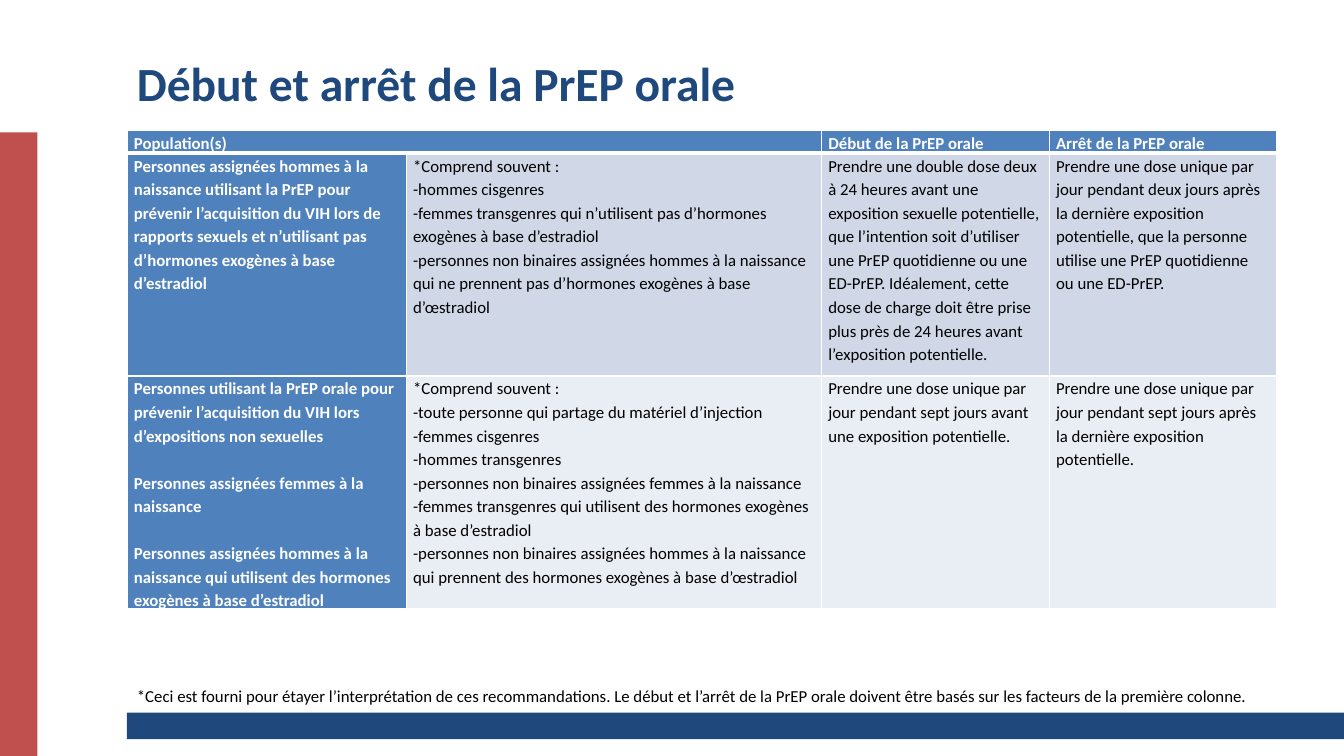
from lxml import etree
from pptx import Presentation
from pptx.dml.color import RGBColor
from pptx.enum.shapes import MSO_SHAPE
from pptx.enum.text import MSO_ANCHOR
from pptx.oxml.ns import qn
from pptx.util import Pt

RECT = MSO_SHAPE.RECTANGLE
TOP, MIDDLE = MSO_ANCHOR.TOP, MSO_ANCHOR.MIDDLE
NAVY = RGBColor(0x1F, 0x49, 0x7D)
RED = RGBColor(0xC0, 0x50, 0x4D)
BLUE = RGBColor(0x4F, 0x81, 0xBD)
PALE = RGBColor(0xD0, 0xD8, 0xE8)
LIGHT = RGBColor(0xE9, 0xED, 0xF4)
WHITE = RGBColor(0xFF, 0xFF, 0xFF)
BLACK = RGBColor(0, 0, 0)

LEFT = 90.7
WIDTH = 821.5
COLS = [199.4, 296.6, 162.7, 162.7]
ROWS = [16.6, 159.1, 162.7]
LINE_GAP = 16.8

HEAD = [["Population(s)"], [], ["Début de la PrEP orale"], ["Arrêt de la PrEP orale"]]
SEXUAL = [
    ["Personnes assignées hommes à la naissance utilisant la PrEP pour prévenir "
     "l’acquisition du VIH lors de rapports sexuels et n’utilisant pas "
     "d’hormones exogènes à base d’estradiol"],
    ["*Comprend souvent :",
     "-hommes cisgenres",
     "-femmes transgenres qui n’utilisent pas d’hormones exogènes à base d’estradiol",
     "-personnes non binaires assignées hommes à la naissance qui ne prennent pas "
     "d’hormones exogènes à base d’œstradiol"],
    ["Prendre une double dose deux à 24 heures avant une exposition sexuelle "
     "potentielle, que l’intention soit d’utiliser une PrEP quotidienne ou une "
     "ED-PrEP. Idéalement, cette dose de charge doit être prise plus près de "
     "24 heures avant l’exposition potentielle."],
    ["Prendre une dose unique par jour pendant deux jours après la dernière "
     "exposition potentielle, que la personne utilise une PrEP quotidienne ou "
     "une ED-PrEP."],
]
OTHER = [
    ["Personnes utilisant la PrEP orale pour prévenir l’acquisition du VIH lors "
     "d’expositions non sexuelles",
     "Personnes assignées femmes à la naissance",
     "Personnes assignées hommes à la naissance qui utilisent des hormones "
     "exogènes à base d’estradiol"],
    ["*Comprend souvent :",
     "-toute personne qui partage du matériel d’injection",
     "-femmes cisgenres",
     "-hommes transgenres",
     "-personnes non binaires assignées femmes à la naissance",
     "-femmes transgenres qui utilisent des hormones exogènes à base d’estradiol",
     "-personnes non binaires assignées hommes à la naissance qui prennent des "
     "hormones exogènes à base d’œstradiol"],
    ["Prendre une dose unique par jour pendant sept jours avant une exposition "
     "potentielle."],
    ["Prendre une dose unique par jour pendant sept jours après la dernière "
     "exposition potentielle."],
]
NOTE = ("*Ceci est fourni pour étayer l’interprétation de ces recommandations. "
        "Le début et l’arrêt de la PrEP orale doivent être basés sur les facteurs "
        "de la première colonne.")


class Deck:
    font = "Calibri"
    size = 12

    def __init__(self, slide):
        self.slide = slide

    def style(self, frame, color, bold=False, size=size):
        for para in frame.paragraphs:
            for run in para.runs:
                font = run.font
                font.name, font.size, font.bold = self.font, Pt(size), bold
                font.color.rgb = color

    def bar(self, x, y, w, h, color):
        shape = self.slide.shapes.add_shape(RECT, Pt(x), Pt(y), Pt(w), Pt(h))
        shape.shadow.inherit = False
        shape.fill.solid()
        shape.fill.fore_color.rgb = color
        shape.line.fill.background()

    def text(self, x, y, w, h, words, color, bold=False, size=size, anchor=TOP):
        frame = self.slide.shapes.add_textbox(Pt(x), Pt(y), Pt(w), Pt(h)).text_frame
        frame.word_wrap = True
        frame.vertical_anchor = anchor
        frame.text = words
        self.style(frame, color, bold, size)

    def border(self, cell, base):
        """Draw white cell edges; base is the width of the lower one."""
        props = cell._tc.get_or_add_tcPr()
        for spot, (side, width) in enumerate(zip("LRTB", (1, 1, 1, base))):
            line = etree.Element(qn(f"a:ln{side}"), w=str(Pt(width)))
            fill = etree.SubElement(line, qn("a:solidFill"))
            etree.SubElement(fill, qn("a:srgbClr"), val=str(WHITE))
            props.insert(spot, line)

    def cell(self, cell, lines, fill, color, gap, base):
        cell.margin_left = cell.margin_right = Pt(5)
        cell.margin_top = cell.margin_bottom = 0
        cell.fill.solid()
        cell.fill.fore_color.rgb = fill
        self.border(cell, base)
        frame = cell.text_frame
        frame.text = "\n".join(lines)
        for num, para in enumerate(frame.paragraphs):
            para.line_spacing = 1.15
            para.space_before = Pt(gap if num else 0)
        self.style(frame, color, color == WHITE)

    def table(self, x, y, cols, rows, data, fills):
        table = self.slide.shapes.add_table(
            len(rows), len(cols), Pt(x), Pt(y), Pt(sum(cols)), Pt(sum(rows))).table
        table.first_col = True
        for col, width in zip(table.columns, cols):
            col.width = Pt(width)
        for r, (row, height) in enumerate(zip(table.rows, rows)):
            row.height = Pt(height)
            for c, lines in enumerate(data[r]):
                head = r == 0 or c == 0
                self.cell(table.cell(r, c), lines,
                          BLUE if head else fills[r],
                          WHITE if head else BLACK,
                          LINE_GAP if c == 0 else 0,
                          3 if r == 0 else 1)
        table.cell(0, 0).merge(table.cell(0, 1))


def main():
    prs = Presentation()
    prs.slide_width, prs.slide_height = Pt(960), Pt(540)
    deck = Deck(prs.slides.add_slide(prs.slide_layouts[6]))
    deck.bar(LEFT, 509, 960 - LEFT, 18.9, NAVY)
    deck.bar(0, 94.5, 26.8, 540 - 94.5, RED)
    deck.text(LEFT, 25.2, 831, 67.7, "Début et arrêt de la PrEP orale",
              NAVY, True, 34, MIDDLE)
    deck.table(LEFT, 92.9, COLS, ROWS, [HEAD, SEXUAL, OTHER], [BLUE, PALE, LIGHT])
    deck.text(LEFT, 486, WIDTH, 21.8, NOTE, BLACK)
    prs.save("out.pptx")


if __name__ == "__main__":
    main()
